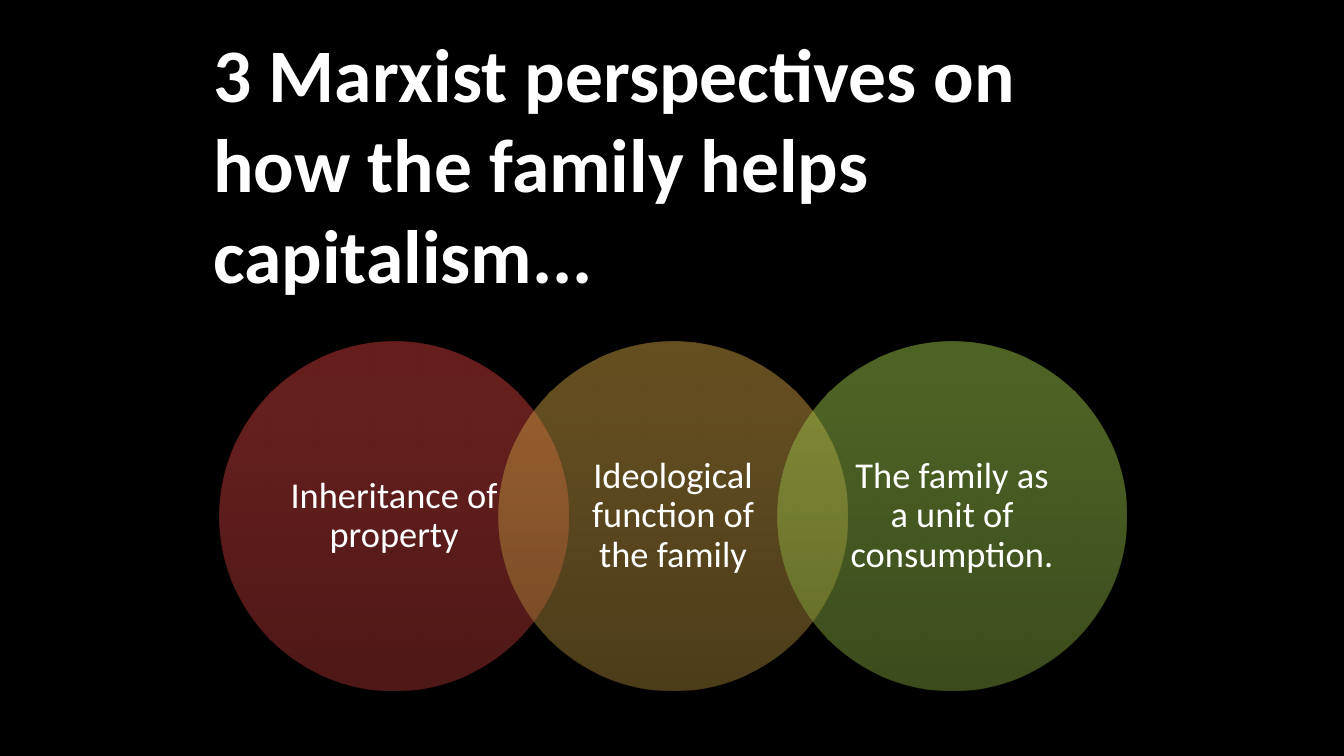
from dataclasses import dataclass

import lxml.etree
import pptx
import pptx.dml.color
import pptx.enum.shapes
import pptx.enum.text
import pptx.oxml.ns
import pptx.slide
import pptx.util

Cm = pptx.util.Cm
CIRCLE_LEFT, CIRCLE_TOP, CIRCLE_SIZE, CIRCLE_PITCH = 5.54, 8.61, 8.79, 7.03
LABEL_INSET = 1.29
STOP_POSITIONS = (0, 80, 100)


@dataclass(frozen=True)
class Perspective:
    label: str
    gradient: tuple[str, str, str]


PERSPECTIVES = (
    Perspective("Inheritance of property", ("9C2F2D", "CB3E3A", "CE3B37")),
    Perspective("Ideological function of the family", ("997832", "C79C41", "CB9D3F")),
    Perspective("The family as a unit of consumption.", ("779737", "9BC348", "9DC746")),
)


def color(value: str) -> pptx.dml.color.RGBColor:
    return pptx.dml.color.RGBColor.from_string(value)


def add_text(page: pptx.slide.Slide, text: str, left: float, top: float,
             width: float, height: float, *, size: float, bold: bool = False,
             align: pptx.enum.text.PP_ALIGN = pptx.enum.text.PP_ALIGN.LEFT,
             line_spacing: float = 1.0, side_margin: float = 0.25,
             end_margin: float = 0.13) -> None:
    box = page.shapes.add_textbox(Cm(left), Cm(top), Cm(width), Cm(height))
    frame = box.text_frame
    frame.word_wrap = True
    frame.vertical_anchor = pptx.enum.text.MSO_ANCHOR.MIDDLE
    frame.margin_left = frame.margin_right = Cm(side_margin)
    frame.margin_top = frame.margin_bottom = Cm(end_margin)
    para = frame.paragraphs[0]
    para.alignment = align
    para.line_spacing = line_spacing
    span = para.add_run()
    span.text = text
    span.font.name = "Calibri"
    span.font.size = pptx.util.Pt(size)
    span.font.bold = bold
    span.font.color.rgb = color("FFFFFF")


def add_circle(page: pptx.slide.Slide, left: float, gradient: tuple[str, str, str]) -> None:
    circle = page.shapes.add_shape(
        pptx.enum.shapes.MSO_SHAPE.OVAL,
        Cm(left), Cm(CIRCLE_TOP), Cm(CIRCLE_SIZE), Cm(CIRCLE_SIZE))
    circle.shadow.inherit = False
    circle.line.fill.background()
    circle.fill.gradient()
    circle.fill.gradient_angle = 90
    qn = pptx.oxml.ns.qn
    stops = circle.element.spPr.find(qn("a:gradFill")).find(qn("a:gsLst"))
    for stop in list(stops):
        stops.remove(stop)
    for position, value in zip(STOP_POSITIONS, gradient):
        stop = lxml.etree.SubElement(stops, qn("a:gs"), pos=str(position * 1000))
        tint = lxml.etree.SubElement(stop, qn("a:srgbClr"), val=str(color(value)))
        lxml.etree.SubElement(tint, qn("a:alpha"), val="50000")


def main() -> None:
    deck = pptx.Presentation()
    deck.slide_width, deck.slide_height = Cm(33.87), Cm(19.05)
    page = deck.slides.add_slide(deck.slide_layouts[6])
    page.background.fill.solid()
    page.background.fill.fore_color.rgb = color("000000")

    add_text(page, "3 Marxist perspectives on how the family helps capitalism...",
             5.13, 2.51, 22.86, 3.18, size=54, bold=True)

    label_size = CIRCLE_SIZE - 2 * LABEL_INSET
    for index, perspective in enumerate(PERSPECTIVES):
        left = CIRCLE_LEFT + index * CIRCLE_PITCH
        add_circle(page, left, perspective.gradient)
        add_text(page, perspective.label, left + LABEL_INSET, CIRCLE_TOP + LABEL_INSET,
                 label_size, label_size, size=26, line_spacing=0.9,
                 align=pptx.enum.text.PP_ALIGN.CENTER, side_margin=0.48, end_margin=0.1)

    deck.save("out.pptx")


if __name__ == "__main__":
    main()
